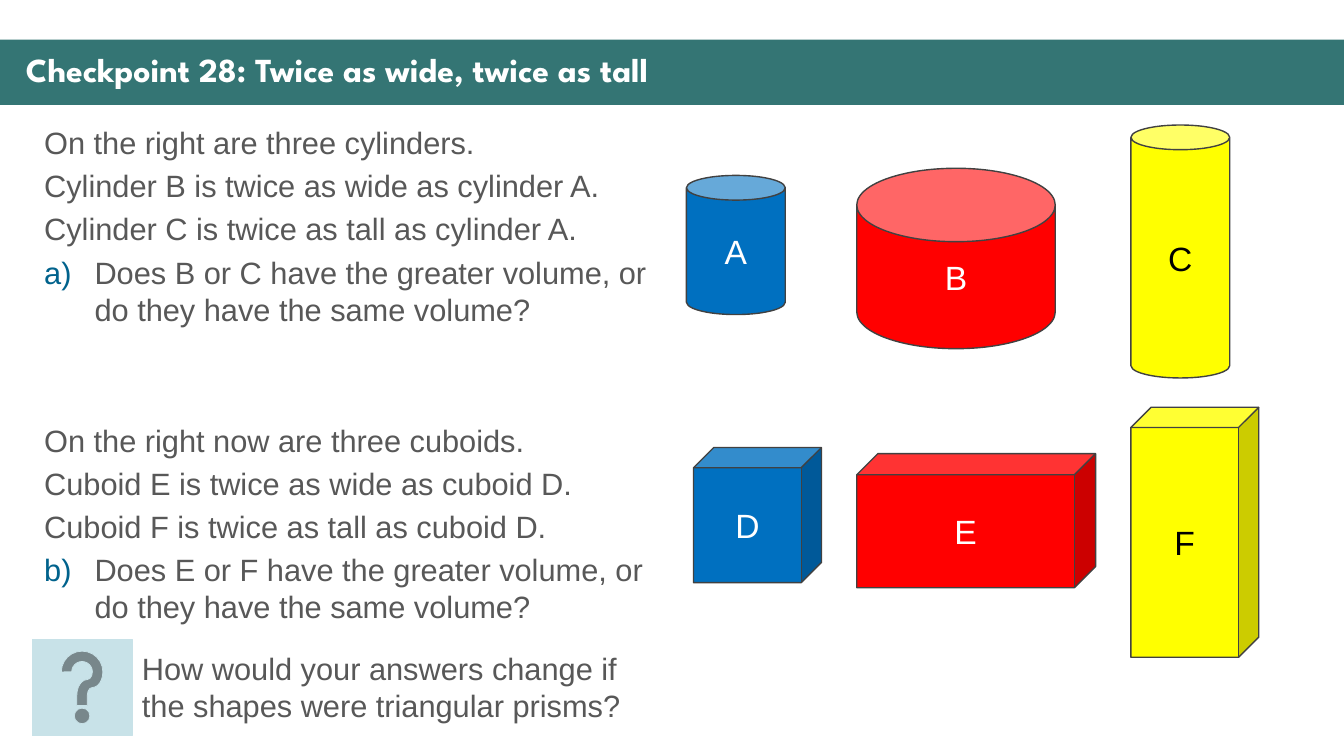
from pptx import Presentation
from pptx import util as u
from pptx.dml.color import RGBColor
from pptx.enum import shapes, text
from pptx.oxml.ns import qn

Pt = u.Pt
COLORS = {"teal": "347574", "blue": "0070C0", "red": "FF0000", "yellow": "FFFF00",
          "outline": "414141", "body": "585858", "number": "00628C",
          "pale": "C8E2E8", "white": "FFFFFF", "black": "000000"}


def add_solid(kind, place, fill, line=None, weight=1):
    solid = page.shapes.add_shape(kind, *map(Pt, place))
    solid.shadow.inherit = False
    solid.fill.solid()
    solid.fill.fore_color.rgb = RGBColor.from_string(COLORS[fill])
    if line:
        solid.line.color.rgb = RGBColor.from_string(COLORS[line])
        solid.line.width = Pt(weight)
    else:
        solid.line.fill.background()
    return solid


def set_font(para, name, size, color, bold=False):
    para.font.name = name
    para.font.size = Pt(size)
    para.font.bold = bold
    para.font.color.rgb = RGBColor.from_string(COLORS[color])


deck = Presentation()
deck.slide_width, deck.slide_height = Pt(960), Pt(540)
page = deck.slides.add_slide(deck.slide_layouts[6])

# Title band
add_solid(shapes.MSO_SHAPE.RECTANGLE, (0, 28.3, 960, 46.7), "teal")
title = page.shapes.add_textbox(Pt(11.5), Pt(34.6), Pt(939), Pt(33.8)).text_frame
title.word_wrap = True
title.vertical_anchor = text.MSO_ANCHOR.MIDDLE
title.text = "Checkpoint 28: Twice as wide, twice as tall"
title.paragraphs[0].line_spacing = 0.9
set_font(title.paragraphs[0], "League Spartan", 24, "white", bold=True)

# Cylinders and cuboids
CAN, CUBE = shapes.MSO_SHAPE.CAN, shapes.MSO_SHAPE.CUBE
solids = [
    ("A", CAN, 0.25, (490.3, 125.3, 70.6, 99.4), "blue", "white"),
    ("B", CAN, 0.407, (612, 120.2, 141.8, 128.9), "red", "white"),
    ("C", CAN, 0.25, (807.8, 89.3, 70.6, 180.7), "yellow", "black"),
    ("D", CUBE, 0.158, (495.4, 319.7, 91.4, 96.5), "blue", "white"),
    ("E", CUBE, 0.158, (612, 324, 170.6, 95.8), "red", "white"),
    ("F", CUBE, 0.158, (807.8, 290.9, 91.4, 178.6), "yellow", "black"),
]
for label, kind, depth, place, fill, color in solids:
    solid = add_solid(kind, place, fill, "outline")
    solid.adjustments[0] = depth
    solid.text_frame.text = label
    solid.text_frame.vertical_anchor = text.MSO_ANCHOR.MIDDLE
    para = solid.text_frame.paragraphs[0]
    para.alignment = text.PP_ALIGN.CENTER
    set_font(para, "Arial", 24, color)

# Help button
add_solid(shapes.MSO_SHAPE.ACTION_BUTTON_HELP, (23, 456.5, 71.3, 69.1), "pale", "pale", 0.5)

# Questions: each line has its space before and its list number, if any
tasks = [
    ("On the right are three cylinders.", 0, None),
    ("Cylinder B is twice as wide as cylinder A.", 4.4, None),
    ("Cylinder C is twice as tall as cylinder A.", 4.4, None),
    ("Does B or C have the greater volume, or do they have the same volume?", 4.4, 1),
    ("On the right now are three cuboids.", 67.2, None),
    ("Cuboid E is twice as wide as cuboid D.", 4.4, None),
    ("Cuboid F is twice as tall as cuboid D.", 4.4, None),
    ("Does E or F have the greater volume, or do they have the same volume?", 4.4, 2),
]
extension = [("How would your answers change if the shapes were triangular prisms?", 0, None)]
for place, lines in (((24.5, 85, 470.9, 375.1), tasks),
                     ((94.3, 460.8, 368.6, 60.5), extension)):
    frame = page.shapes.add_textbox(*map(Pt, place)).text_frame
    frame.word_wrap = True
    for index, (wording, gap, number) in enumerate(lines):
        para = frame.add_paragraph() if index else frame.paragraphs[0]
        para.text = wording
        para.line_spacing = Pt(26.4)
        para.space_before = Pt(gap)
        if number:
            props = para._p.get_or_add_pPr()
            props.set("marL", str(Pt(36)))
            props.set("indent", str(-Pt(36)))
            tint = props.makeelement(qn("a:buClr"), {})
            tint.append(tint.makeelement(qn("a:srgbClr"), {"val": COLORS["number"]}))
            props.append(tint)
            props.append(props.makeelement(
                qn("a:buAutoNum"), {"type": "alphaLcParenR", "startAt": str(number)}))
        set_font(para, "Arial", 22, "body")

deck.save("out.pptx")
